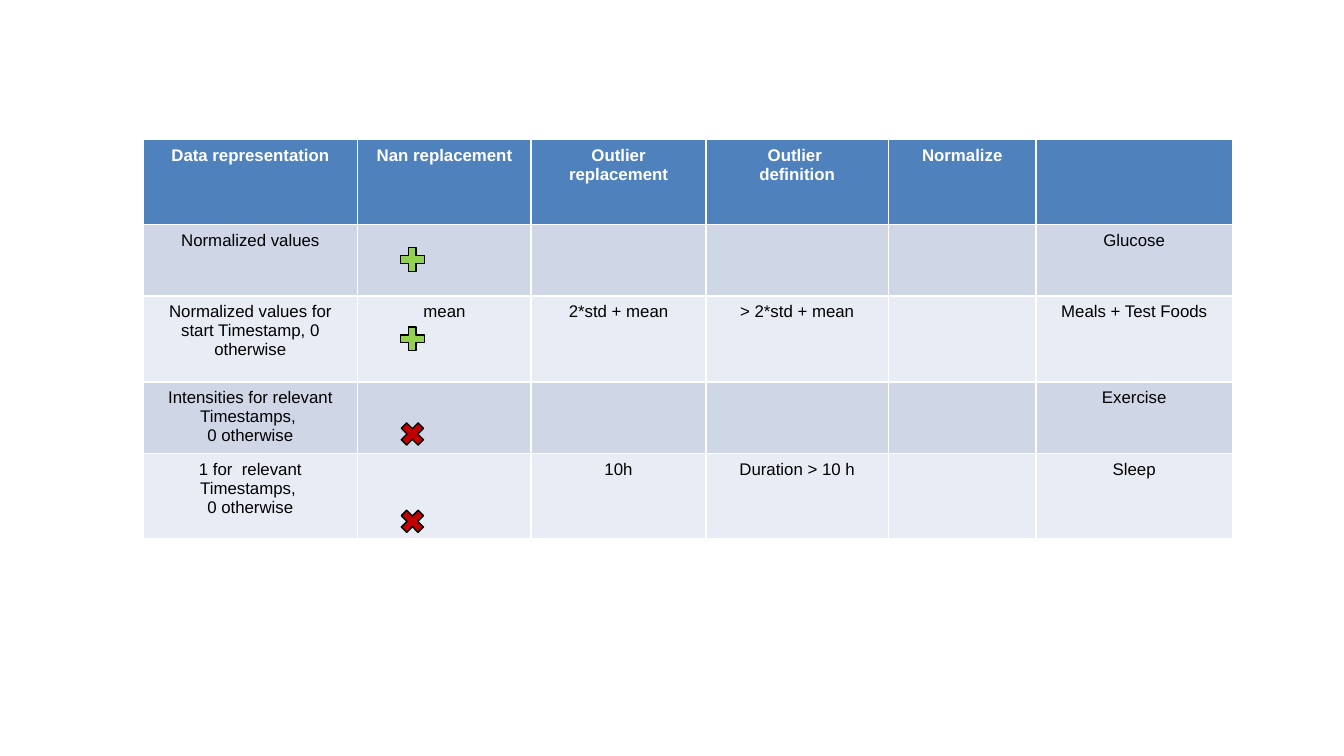
from pptx import Presentation
from pptx.dml.color import RGBColor
from pptx.enum.shapes import MSO_SHAPE
from pptx.enum.text import PP_ALIGN
from pptx.util import Cm, Pt

PLUS = MSO_SHAPE.MATH_PLUS
CROSS = MSO_SHAPE.MATH_MULTIPLY
CENTER = PP_ALIGN.CENTER

ROWS = [
    ["Data representation", "Nan replacement", "Outlier replacement",
     "Outlier \ndefinition", "Normalize", ""],
    ["Normalized values", "", "", "", "", "Glucose"],
    ["Normalized values for start Timestamp, 0 otherwise", "mean",
     "2*std + mean", "> 2*std + mean", "", "Meals + Test Foods"],
    ["Intensities for relevant Timestamps, \n0 otherwise", "", "", "", "",
     "Exercise"],
    ["1 for  relevant Timestamps, \n0 otherwise", "", "10h",
     "Duration > 10 h", "", "Sleep"],
]
COLUMN_WIDTHS = [4.06, 3.28, 3.3, 3.45, 2.79, 3.71]
ROW_HEIGHTS = [1.6, 1.35, 1.63, 1.35, 1.61]
TABLE_LEFT, TABLE_TOP = 2.7, 2.64
HEADER_FILL = "4F81BD"
BAND_FILLS = ["E8ECF4", "CFD7E7"]

MARK_LEFT, MARK_SIZE = 7.49, 0.61
MARKS = [
    (PLUS, "92D050", 4.6),
    (PLUS, "92D050", 6.1),
    (CROSS, "C00000", 7.9),
    (CROSS, "C00000", 9.55),
]


def paint(fill, color):
    fill.solid()
    fill.fore_color.rgb = RGBColor.from_string(color)


def fill_cell(cell, text, row_index):
    header = row_index == 0
    paint(cell.fill, HEADER_FILL if header else BAND_FILLS[row_index % 2])
    cell.text_frame.text = text
    for paragraph in cell.text_frame.paragraphs:
        paragraph.alignment = CENTER
        for run in paragraph.runs:
            run.font.name = "Arial"
            run.font.size = Pt(9)
            run.font.bold = header
            paint(run.font.fill, "FFFFFF" if header else "000000")


def add_comparison_table(slide):
    table = slide.shapes.add_table(
        len(ROWS), len(COLUMN_WIDTHS), Cm(TABLE_LEFT), Cm(TABLE_TOP),
        Cm(sum(COLUMN_WIDTHS)), Cm(sum(ROW_HEIGHTS))).table
    for column, width in zip(table.columns, COLUMN_WIDTHS):
        column.width = Cm(width)
    for row_index, (row, height) in enumerate(zip(table.rows, ROW_HEIGHTS)):
        row.height = Cm(height)
        for cell, text in zip(row.cells, ROWS[row_index]):
            fill_cell(cell, text, row_index)


def add_mark(slide, kind, color, top):
    mark = slide.shapes.add_shape(
        kind, Cm(MARK_LEFT), Cm(top), Cm(MARK_SIZE), Cm(MARK_SIZE))
    mark.shadow.inherit = False
    paint(mark.fill, color)
    paint(mark.line.fill, "000000")
    mark.line.width = Pt(0.75)


def main():
    presentation = Presentation()
    presentation.slide_width = Cm(25.4)
    presentation.slide_height = Cm(14.29)
    slide = presentation.slides.add_slide(presentation.slide_layouts[6])
    add_comparison_table(slide)
    for kind, color, top in MARKS:
        add_mark(slide, kind, color, top)
    presentation.save("out.pptx")


if __name__ == "__main__":
    main()
